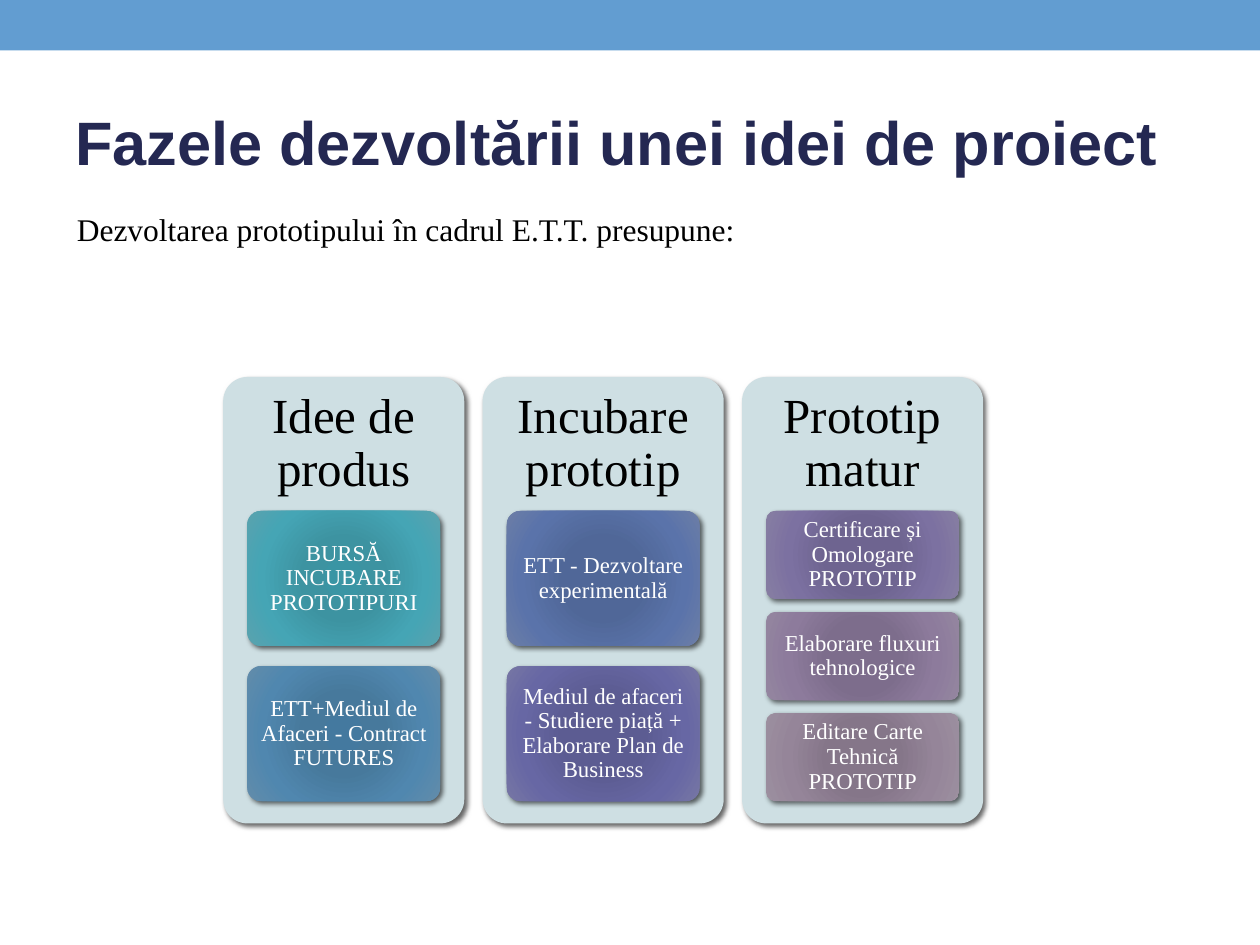
from pptx import Presentation
from pptx import util as u
from pptx.dml.color import RGBColor
from pptx.enum import shapes, text
from pptx.oxml import parse_xml
from pptx.oxml.ns import nsdecls, qn

color = RGBColor.from_string
SERIF = "Times New Roman"

deck = Presentation()
deck.slide_width, deck.slide_height = u.Cm(25.4), u.Cm(19.05)
page = deck.slides.add_slide(deck.slide_layouts[6])


def write(box, words, size, ink, font=SERIF, bold=False, centred=True,
          middle=True, inset=(0.25, 0.13)):
    """Put one paragraph of text into a box."""
    frame = box.text_frame
    frame.word_wrap = True
    frame.margin_left = frame.margin_right = u.Cm(inset[0])
    frame.margin_top = frame.margin_bottom = u.Cm(inset[1])
    frame.vertical_anchor = text.MSO_ANCHOR.MIDDLE if middle else text.MSO_ANCHOR.TOP
    para = frame.paragraphs[0]
    para.alignment = text.PP_ALIGN.CENTER if centred else text.PP_ALIGN.LEFT
    if centred:
        para.line_spacing = 0.9
    span = para.add_run()
    span.text = words
    span.font.size = u.Pt(size)
    span.font.name = font
    span.font.bold = bold
    span.font.color.rgb = color(ink)


def add_rounded(left, top, width, height):
    """Add a rounded rectangle with a soft shadow to the lower right."""
    box = page.shapes.add_shape(shapes.MSO_SHAPE.ROUNDED_RECTANGLE,
                                u.Cm(left), u.Cm(top), u.Cm(width), u.Cm(height))
    box.adjustments[0] = 0.1
    box.line.fill.background()
    box.shadow.inherit = False
    effects = box._element.spPr.find(qn("a:effectLst"))
    effects.append(parse_xml(
        f'<a:outerShdw {nsdecls("a")} blurRad="{u.Pt(3)}" dist="{u.Pt(2)}" '
        'dir="2700000" rotWithShape="0"><a:srgbClr val="000000">'
        '<a:alpha val="60000"/></a:srgbClr></a:outerShdw>'))
    return box


# Top band
band = page.shapes.add_shape(shapes.MSO_SHAPE.RECTANGLE, 0, 0, deck.slide_width, u.Cm(1.02))
band.shadow.inherit = False
band.fill.solid()
band.fill.fore_color.rgb = color("629DD1")
band.line.fill.background()

# Title and introduction
title = page.shapes.add_textbox(u.Cm(1.27), u.Cm(1.47), u.Cm(23.93), u.Cm(2.74))
write(title, "Fazele dezvoltării unei idei de proiect", 35, "242852",
      font="Arial", bold=True, centred=False)
intro = page.shapes.add_textbox(u.Cm(1.3), u.Cm(4.11), u.Cm(22.86), u.Cm(1.2))
write(intro, "Dezvoltarea prototipului în cadrul E.T.T. presupune:", 18, "000000",
      centred=False, middle=False)

# Phases: heading, then cards with gradient colours from centre to edge
phases = [
    ("Idee de produs", [
        ("BURSĂ INCUBARE PROTOTIPURI", ("3A95A4", "3D93A1", "45A5B5", "5AA2AE")),
        ("ETT+Mediul de Afaceri - Contract FUTURES", ("44799F", "47799C", "5087AF", "628CAA")),
    ]),
    ("Incubare prototip", [
        ("ETT - Dezvoltare experimentală", ("4E669A", "506798", "5A73AA", "6C7EA6")),
        ("Mediul de afaceri - Studiere piață + Elaborare Plan de Business",
         ("5A5A94", "5C5C92", "6767A4", "7676A4")),
    ]),
    ("Prototip matur", [
        ("Certificare și Omologare PROTOTIP", ("6D6391", "6E6490", "7C71A1", "877EA2")),
        ("Elaborare fluxuri tehnologice", ("7D6C8D", "7D6D8C", "8D7B9C", "9486A0")),
        ("Editare Carte Tehnică PROTOTIP", ("86758A", "857689", "958599", "9C8F9F")),
    ]),
]
STOPS = (0, 34, 70, 100)
PANEL_TOP, PANEL_WIDTH, PANEL_HEIGHT = 7.6, 4.86, 9
HEADING_HEIGHT = 2.7
CARDS_TOP, CARDS_HEIGHT, CARD_WIDTH = 10.3, 5.85, 3.89
GAP = 0.15  # gap between cards as a share of card height

for column, (heading, cards) in enumerate(phases):
    # Panel and its heading
    left = 4.5 + column * 5.23
    panel = add_rounded(left, PANEL_TOP, PANEL_WIDTH, PANEL_HEIGHT)
    panel.fill.solid()
    panel.fill.fore_color.rgb = color("CEDFE3")
    label = page.shapes.add_textbox(u.Cm(left), u.Cm(PANEL_TOP),
                                    u.Cm(PANEL_WIDTH), u.Cm(HEADING_HEIGHT))
    write(label, heading, 28, "000000", inset=(0.3, 0.3))

    # Cards share the height below the heading
    height = CARDS_HEIGHT / (len(cards) + GAP * (len(cards) - 1))
    for row, (words, hues) in enumerate(cards):
        card = add_rounded(left + (PANEL_WIDTH - CARD_WIDTH) / 2,
                           CARDS_TOP + row * height * (1 + GAP), CARD_WIDTH, height)
        stops = "".join(f'<a:gs pos="{stop * 1000}"><a:srgbClr val="{hue}"/></a:gs>'
                        for stop, hue in zip(STOPS, hues))
        card._element.spPr.find(qn("a:prstGeom")).addnext(parse_xml(
            f'<a:gradFill {nsdecls("a")} rotWithShape="1"><a:gsLst>{stops}</a:gsLst>'
            '<a:path path="circle"><a:fillToRect l="50000" t="50000" r="50000" b="50000"/>'
            '</a:path></a:gradFill>'))
        write(card, words, 13, "FFFFFF", inset=(0.18, 0.14))

deck.save("out.pptx")
